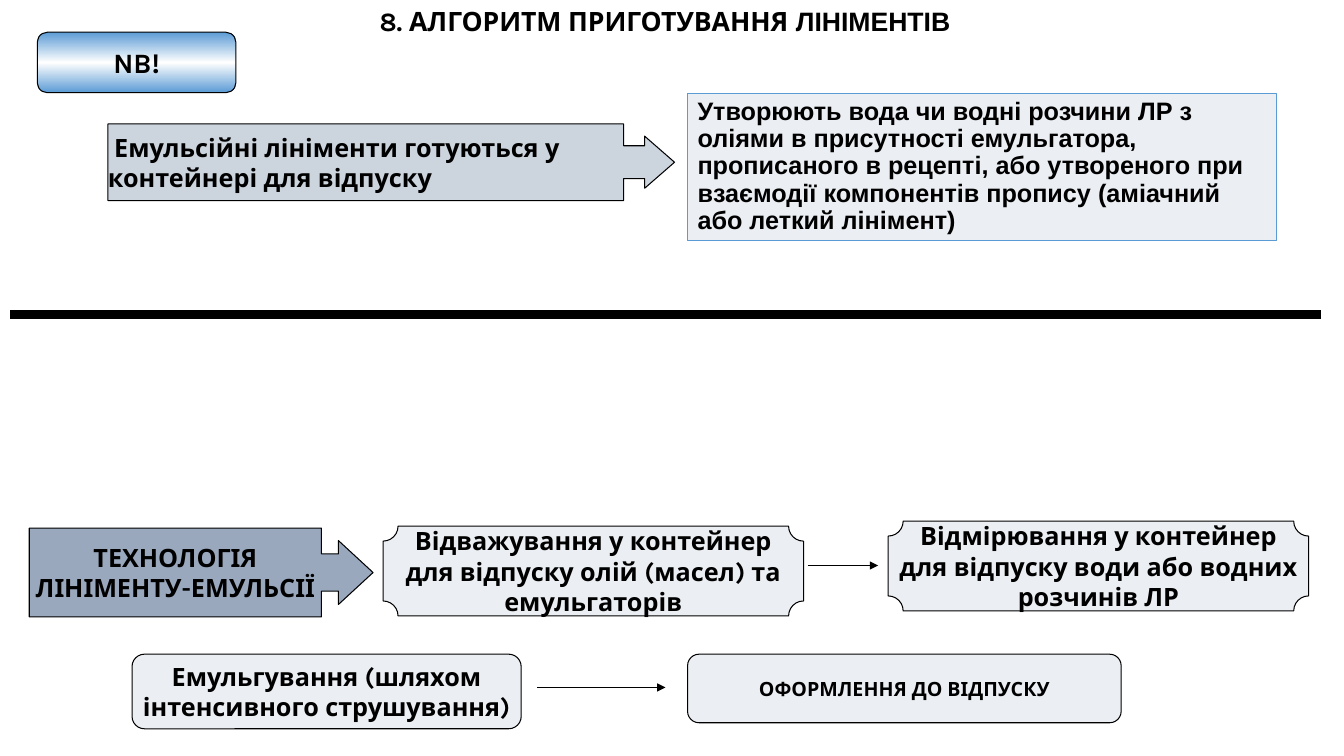
"""Build the slide on the algorithm for preparing liniments."""
import copy

import pptx
import pptx.dml.color
import pptx.enum.shapes
import pptx.enum.text
import pptx.oxml
import pptx.oxml.ns
import pptx.util

SCALE = 9144
BLACK, PALE, BLUE = "000000", "EBEEF2", "5B9BD5"
FONT = "Karla"
KIND = pptx.enum.shapes.MSO_SHAPE
ALIGN = pptx.enum.text.PP_ALIGN
ANCHOR = pptx.enum.text.MSO_ANCHOR


def px(num):
    return pptx.util.Emu(num * SCALE)


def tint(code):
    return pptx.dml.color.RGBColor.from_string(code)


def place(shape, box):
    shape.left, shape.top, shape.width, shape.height = map(px, box)


def write(frame, runs, size, align=ALIGN.CENTER, pads=(10, 5), anchor=ANCHOR.MIDDLE):
    frame.word_wrap = True
    frame.auto_size = pptx.enum.text.MSO_AUTO_SIZE.NONE
    frame.vertical_anchor = anchor
    frame.margin_left = frame.margin_right = px(pads[0])
    frame.margin_top = frame.margin_bottom = px(pads[1])
    para = frame.paragraphs[0]
    para.alignment = align
    for text, face in runs:
        run = para.add_run()
        run.text = text
        run.font.name = face
        run.font.size = pptx.util.Pt(size)
        run.font.bold = True
        run.font.color.rgb = tint(BLACK)
    return para


def add_box(slide, kind, box, fill=PALE, adjust=(), edge=BLACK):
    shape = slide.shapes.add_shape(kind, *map(px, box))
    shape.shadow.inherit = False
    for spot, value in enumerate(adjust):
        shape.adjustments[spot] = value
    shape.fill.solid()
    shape.fill.fore_color.rgb = tint(fill)
    shape.line.color.rgb = tint(edge)
    shape.line.width = pptx.util.Pt(0.75)
    return shape


def blend(shape, codes):
    shape.fill.gradient()
    shape.fill.gradient_angle = 90
    stops = shape._element.spPr.find(".//" + pptx.oxml.ns.qn("a:gsLst"))
    stops.insert(1, copy.deepcopy(stops[0]))
    for spot, (stop, code) in enumerate(zip(shape.fill.gradient_stops, codes)):
        stop.position = spot / (len(codes) - 1)
        stop.color.rgb = tint(code)


def add_line(slide, left, right, top, width=0.75, head=True):
    kind = pptx.enum.shapes.MSO_CONNECTOR.STRAIGHT
    line = slide.shapes.add_connector(kind, px(left), px(top), px(right), px(top))
    line.line.color.rgb = tint(BLACK)
    line.line.width = pptx.util.Pt(width)
    props = line._element.spPr
    if head:
        tail = pptx.oxml.parse_xml(
            f'<a:tailEnd {pptx.oxml.ns.nsdecls("a")} type="triangle"/>')
        props.find(pptx.oxml.ns.qn("a:ln")).append(tail)
    props.append(pptx.oxml.parse_xml(f'<a:effectLst {pptx.oxml.ns.nsdecls("a")}/>'))


def add_title(slide):
    title = slide.shapes.title
    place(title, (21, 0, 1277, 42))
    write(title.text_frame, [("8. АЛГОРИТМ ПРИГОТУВАННЯ", FONT), (" ЛІНІМЕНТІВ", "Arial")],
          19, anchor=ANCHOR.TOP)


def add_steps(slide):
    steps = [
        (KIND.PLAQUE, (380, 522, 417, 89), 18,
         "Відважування у контейнер для відпуску олій (масел) та емульгаторів"),
        (KIND.PLAQUE, (881, 517, 417, 89), 18,
         "Відмірювання у контейнер для відпуску води або водних розчинів ЛР"),
        (KIND.ROUNDED_RECTANGLE, (131, 649, 386, 74), 18,
         "Емульгування (шляхом інтенсивного струшування)"),
        (KIND.ROUNDED_RECTANGLE, (682, 649, 430, 68), 14, "ОФОРМЛЕННЯ ДО ВІДПУСКУ"),
    ]
    for kind, box, size, text in steps:
        pads = (0, 0) if kind == KIND.PLAQUE else (2, 0)
        write(add_box(slide, kind, box).text_frame, [(text, FONT)], size, pads=pads)


def add_calls(slide):
    kind = KIND.RIGHT_ARROW_CALLOUT
    blend_call = add_box(slide, kind, (107, 123, 562, 76), "CCD4DE", (0.43, 0.34, 0.39, 0.91))
    write(blend_call.text_frame,
          [(" ", "Times New Roman"),
           ("Емульсійні лініменти готуються у контейнері для відпуску", FONT)],
          18, ALIGN.LEFT, (0, 0))
    tech = add_box(slide, kind, (29, 524, 341, 88), "99A8BD", (0.42, 0.36, 0.39, 0.85))
    write(tech.text_frame, [("ТЕХНОЛОГІЯ ЛІНІМЕНТУ-ЕМУЛЬСІЇ", FONT)], 18, pads=(0, 0))


def add_notes(slide):
    fact = add_box(slide, KIND.RECTANGLE, (682, 93, 584, 146), edge=BLUE)
    text = ("Утворюють вода чи водні розчини ЛР з оліями в присутності емульгатора, "
            "прописаного в рецепті, або утвореного при взаємодії компонентів пропису "
            "(аміачний або леткий лінімент)")
    para = write(fact.text_frame, [(text, "Arial")], 18, ALIGN.LEFT, anchor=ANCHOR.TOP)
    para.line_spacing = 0.9
    badge = add_box(slide, KIND.ROUNDED_RECTANGLE, (37, 32, 197, 60))
    blend(badge, (BLUE, "FFFFFF", BLUE))
    write(badge.text_frame, [("NB!", FONT)], 20)


def main():
    deck = pptx.Presentation()
    deck.slide_width, deck.slide_height = px(1333), px(750)
    slide = deck.slides.add_slide(deck.slide_layouts[5])
    add_title(slide)
    add_steps(slide)
    add_calls(slide)
    add_notes(slide)
    add_line(slide, 10, 1310, 312, 6, False)
    add_line(slide, 801, 871, 561)
    add_line(slide, 533, 660, 682)
    deck.save("out.pptx")


if __name__ == "__main__":
    main()
